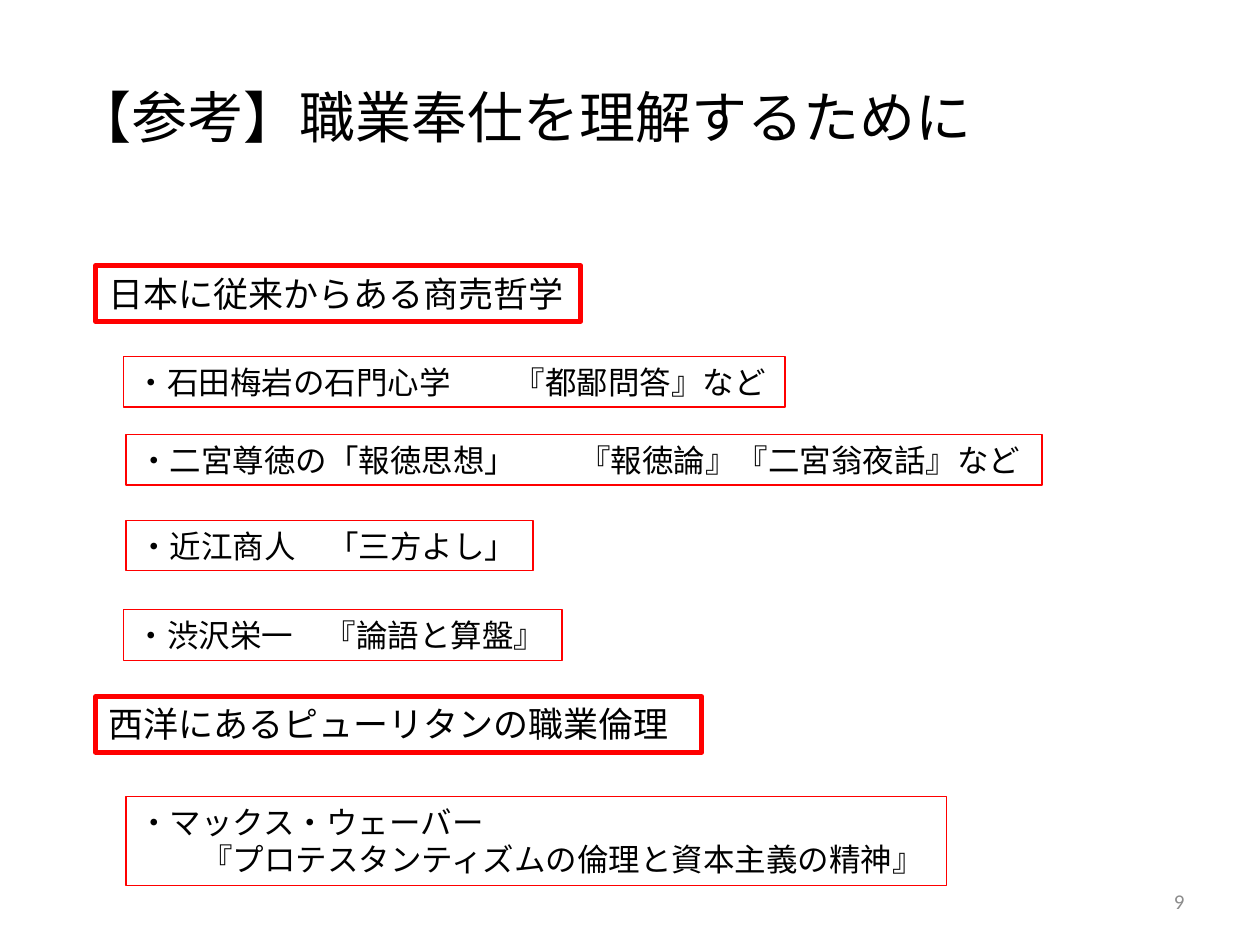
from lxml import etree
from pptx import Presentation
from pptx.dml.color import RGBColor
from pptx.enum.shapes import MSO_SHAPE
from pptx.enum.text import MSO_ANCHOR, PP_ALIGN
from pptx.oxml.ns import qn
from pptx.util import Inches, Pt

RECTANGLE = MSO_SHAPE.RECTANGLE
TOP, MIDDLE = MSO_ANCHOR.TOP, MSO_ANCHOR.MIDDLE
LEFT, RIGHT = PP_ALIGN.LEFT, PP_ALIGN.RIGHT

COLORS = {"text": "000000", "frame": "FF0000", "number": "8C8C8C"}
JAPANESE, LATIN = "Noto Sans CJK JP", "Calibri"
WIDTH, HEIGHT = 10, 7.5
EM = 18 / 72

TITLE = "【参考】職業奉仕を理解するために"
PAGE_NUMBER = "9"
HEADINGS = [
    ("日本に従来からある商売哲学", 2.11, 3.85),
    ("西洋にあるピューリタンの職業倫理", 5.53, 4.81),
]
ITEMS = [
    (["・石田梅岩の石門心学\t『都鄙問答』など"], 0.98, 2.83, 5.25, 12),
    (["・二宮尊徳の「報徳思想」\t『報徳論』『二宮翁夜話』など"], 1, 3.45, 7.27, 14),
    (["・近江商人　「三方よし」"], 1, 4.13, 3.23, 0),
    (["・渋沢栄一　『論語と算盤』"], 0.98, 4.84, 3.48, 0),
    (["・マックス・ウェーバー", "『プロテスタンティズムの倫理と資本主義の精神』"], 1, 6.32, 6.51, 2),
]


def write(box, lines, size, font=JAPANESE, color="text", align=LEFT, anchor=TOP, gap=0):
    """Fill a box with lines; gap, in characters, sets a tab stop or the indent of later lines."""
    frame = box.text_frame
    frame.word_wrap = True
    frame.vertical_anchor = anchor
    for index, line in enumerate(lines):
        para = frame.paragraphs[0] if index == 0 else frame.add_paragraph()
        para.alignment = align
        properties = para._p.get_or_add_pPr()
        if "\t" in line:
            stops = etree.SubElement(properties, qn("a:tabLst"))
            etree.SubElement(stops, qn("a:tab"), pos=str(Inches(gap * EM)), algn="l")
        elif index:
            properties.set("marL", str(Inches(gap * EM)))
        span = para.add_run()
        span.text = line
        span.font.size = Pt(size)
        span.font.name = font
        span.font.color.rgb = RGBColor.from_string(COLORS[color])
        etree.SubElement(span._r.get_or_add_rPr(), qn("a:ea"), typeface=font)


def add_label(page, place, lines, size, **style):
    write(page.shapes.add_textbox(*map(Inches, place)), lines, size, **style)


def add_framed(page, place, lines, size, line_width, gap=0):
    box = page.shapes.add_shape(RECTANGLE, *map(Inches, place))
    box.shadow.inherit = False
    box.fill.background()
    box.line.color.rgb = RGBColor.from_string(COLORS["frame"])
    box.line.width = Pt(line_width)
    write(box, lines, size, gap=gap)


def main():
    deck = Presentation()
    deck.slide_width, deck.slide_height = Inches(WIDTH), Inches(HEIGHT)
    page = deck.slides.add_slide(deck.slide_layouts[6])
    add_label(page, (0.5, 0.3, 9, 1.25), [TITLE], 32, anchor=MIDDLE)
    add_label(page, (7.17, 6.95, 2.33, 0.4), [PAGE_NUMBER], 12,
              font=LATIN, color="number", align=RIGHT, anchor=MIDDLE)
    for text, top, width in HEADINGS:
        add_framed(page, (0.76, top, width, 0.44), [text], 20, 3)
    for lines, left, top, width, gap in ITEMS:
        height = 0.4 + 0.31 * (len(lines) - 1)
        add_framed(page, (left, top, width, height), lines, 18, 0.75, gap)
    deck.save("out.pptx")


if __name__ == "__main__":
    main()
